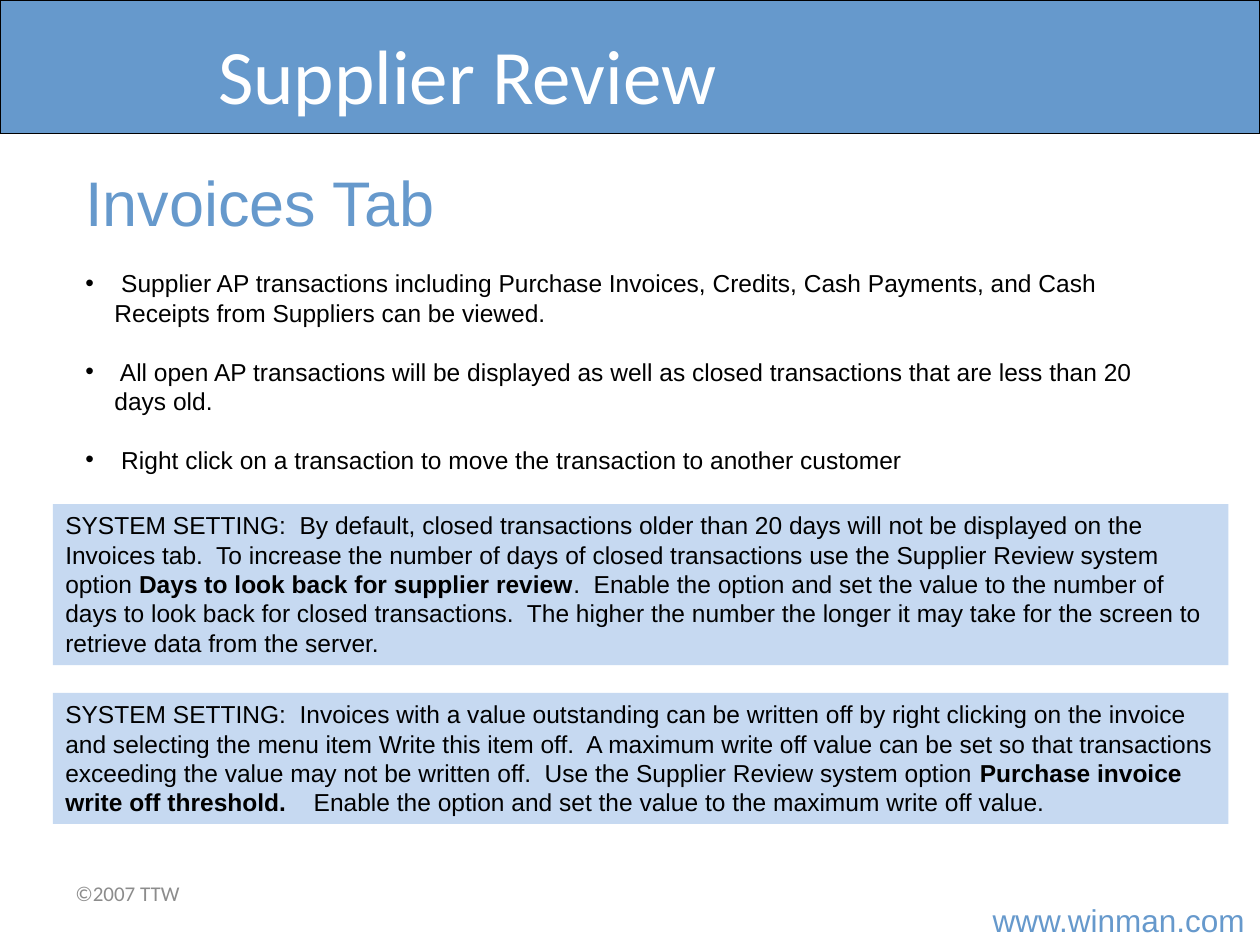
from dataclasses import dataclass

import pptx
import pptx.dml.color
import pptx.enum.shapes
import pptx.enum.text
import pptx.util
from lxml import etree
from pptx.oxml import ns

Inches = pptx.util.Inches
Pt = pptx.util.Pt
RGBColor = pptx.dml.color.RGBColor
ALIGN = pptx.enum.text.PP_ALIGN
ANCHOR = pptx.enum.text.MSO_ANCHOR

BLUE = RGBColor(0x66, 0x99, 0xCC)
PALE_BLUE = RGBColor(0xC6, 0xD9, 0xF1)
WHITE = RGBColor(0xFF, 0xFF, 0xFF)
BLACK = RGBColor(0, 0, 0)
GREY = RGBColor(0x8C, 0x8C, 0x8C)


@dataclass
class Box:
    left: float
    top: float
    width: float
    height: float

    def lengths(self):
        return [Inches(v) for v in (self.left, self.top, self.width, self.height)]


@dataclass
class Setting:
    """A system setting note: plain text around a bold option name."""
    top: float
    height: float
    before: str
    option: str
    after: str


BULLETS = [
    " Supplier AP transactions including Purchase Invoices, Credits, Cash Payments, "
    "and Cash Receipts from Suppliers can be viewed.",
    " All open AP transactions will be displayed as well as closed transactions "
    "that are less than 20 days old.",
    " Right click on a transaction to move the transaction to another customer",
]

SETTINGS = [
    Setting(
        4, 1.28,
        "SYSTEM SETTING:  By default, closed transactions older than 20 days will not be "
        "displayed on the Invoices tab.  To increase the number of days of closed "
        "transactions use the Supplier Review system option ",
        "Days to look back for supplier review",
        ".  Enable the option and set the value to the number of days to look back for "
        "closed transactions.  The higher the number the longer it may take for the "
        "screen to retrieve data from the server."),
    Setting(
        5.5, 1.04,
        "SYSTEM SETTING:  Invoices with a value outstanding can be written off by right "
        "clicking on the invoice and selecting the menu item Write this item off.  A "
        "maximum write off value can be set so that transactions exceeding the value may "
        "not be written off.  Use the Supplier Review system option ",
        "Purchase invoice write off threshold.  ",
        "  Enable the option and set the value to the maximum write off value."),
]


def add_run(p, text: str, *, size: float = 14, font: str = "Arial",
            color: RGBColor = BLACK, bold: bool = False) -> None:
    r = p.add_run()
    r.text = text
    r.font.size = Pt(size)
    r.font.name = font
    r.font.bold = bold
    r.font.color.rgb = color


def add_text(s, box: Box, text: str, *, align=ALIGN.LEFT, anchor=ANCHOR.TOP,
             wrap: bool = True, **style) -> None:
    tf = s.shapes.add_textbox(*box.lengths()).text_frame
    tf.word_wrap = wrap
    tf.vertical_anchor = anchor
    p = tf.paragraphs[0]
    p.alignment = align
    add_run(p, text, **style)


def add_rect(s, box: Box, fill: RGBColor):
    sp = s.shapes.add_shape(pptx.enum.shapes.MSO_SHAPE.RECTANGLE, *box.lengths())
    sp.shadow.inherit = False
    sp.fill.solid()
    sp.fill.fore_color.rgb = fill
    sp.line.fill.background()
    return sp


def add_bullets(s, box: Box, items: list[str]) -> None:
    tf = s.shapes.add_textbox(*box.lengths()).text_frame
    tf.word_wrap = True
    for i, text in enumerate(items):
        p = tf.add_paragraph() if i else tf.paragraphs[0]
        if i:
            p.space_before = Pt(16.8)
        pPr = p._p.get_or_add_pPr()
        pPr.set("marL", str(Inches(0.23)))
        pPr.set("indent", str(-Inches(0.23)))
        etree.SubElement(pPr, ns.qn("a:buFont"), typeface="Arial")
        etree.SubElement(pPr, ns.qn("a:buChar"), char="•")
        add_run(p, text)


def add_setting(s, note: Setting) -> None:
    sp = add_rect(s, Box(0.42, note.top, 9.33, note.height), PALE_BLUE)
    tf = sp.text_frame
    tf.word_wrap = True
    tf.vertical_anchor = ANCHOR.TOP
    p = tf.paragraphs[0]
    p.alignment = ALIGN.LEFT
    add_run(p, note.before)
    add_run(p, note.option, bold=True)
    add_run(p, note.after)


def main() -> None:
    prs = pptx.Presentation()
    prs.slide_width, prs.slide_height = Inches(10), Inches(7.5)
    s = prs.slides.add_slide(prs.slide_layouts[6])

    # Title band
    band = add_rect(s, Box(0, 0, 10, 1.06), BLUE)
    band.line.color.rgb = BLACK
    band.line.width = Pt(0.75)
    add_text(s, Box(0, 0.17, 7.42, 0.83), "Supplier Review", align=ALIGN.CENTER,
             anchor=ANCHOR.MIDDLE, size=44, font="Calibri", color=WHITE)

    # Heading and bullets
    add_text(s, Box(0.58, 1.25, 7.67, 0.71), "Invoices Tab", size=36, color=BLUE)
    add_bullets(s, Box(0.58, 2.08, 8.92, 1.75), BULLETS)

    # System setting notes
    for note in SETTINGS:
        add_setting(s, note)

    # Footer
    add_text(s, Box(0.5, 6.83, 2.33, 0.52), "©2007 TTW", anchor=ANCHOR.MIDDLE,
             size=12, font="Calibri", color=GREY)
    add_text(s, Box(7.78, 7.1, 2.22, 0.4), "www.winman.com", wrap=False,
             size=18, color=BLUE)

    prs.save("out.pptx")


if __name__ == "__main__":
    main()
